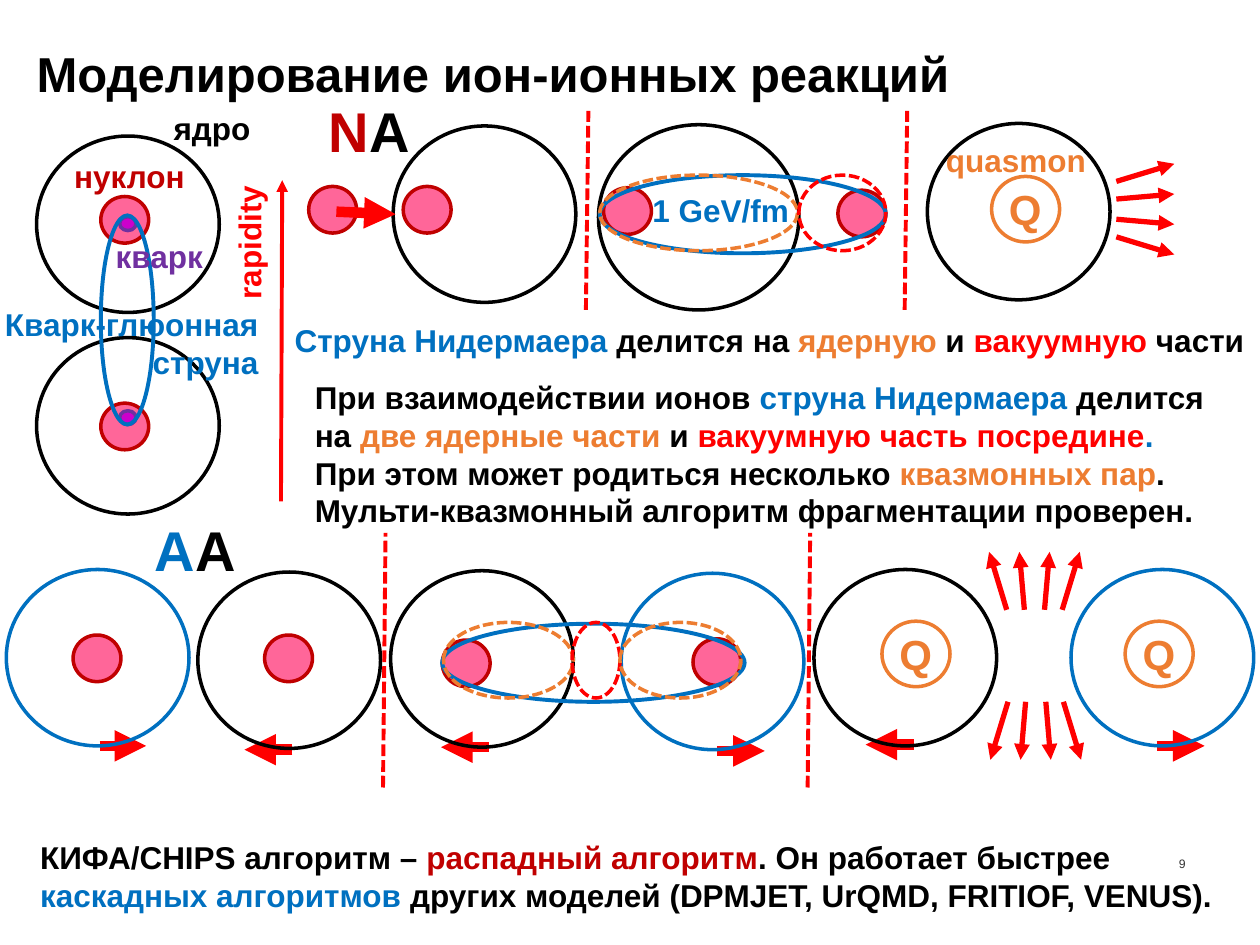
from dataclasses import dataclass

from lxml import etree
from pptx import Presentation
from pptx.dml.color import RGBColor
from pptx.enum.dml import MSO_LINE
from pptx.enum.shapes import MSO_CONNECTOR, MSO_SHAPE
from pptx.enum.text import MSO_ANCHOR, PP_ALIGN
from pptx.oxml.ns import qn
from pptx.slide import Slide
from pptx.util import Pt

PX = 9144
FONT = "Arial"
COLORS = {
    "black": "000000", "gray": "333333", "blue": "0070C0", "red": "FF0000",
    "crimson": "C00000", "pink": "FF6699", "orange": "ED7D31",
    "purple": "7030A0", "magenta": "CC00CC",
}
OVAL, STRAIGHT = MSO_SHAPE.OVAL, MSO_CONNECTOR.STRAIGHT
DASH = MSO_LINE.SQUARE_DOT
LEFT, RIGHT = PP_ALIGN.LEFT, PP_ALIGN.RIGHT
MIDDLE, TOP, BOTTOM = MSO_ANCHOR.MIDDLE, MSO_ANCHOR.TOP, MSO_ANCHOR.BOTTOM
NUCLEUS = (145, 140)
NUCLEON = (38, 37)
SPRAY = ((-22, -36), (-8, -12), (8, 12), (22, 36))


@dataclass
class Region:
    """A box on the slide whose parts are placed from its left top corner."""
    slide: Slide
    left: int
    top: int

    def spot(self, x, y):
        """Turn a point of the region into slide EMU."""
        return (self.left + x) * PX, (self.top + y) * PX


def rgb(name):
    """Look up a colour by name."""
    return RGBColor.from_string(COLORS[name])


def format_text(frame, paragraphs, size=18, bold=True, align=LEFT, anchor=TOP, inset=None):
    """Fill a frame with paragraphs made of (text, colour) runs."""
    frame.word_wrap = True
    frame.vertical_anchor = anchor
    if inset is not None:
        frame.margin_left = frame.margin_right = inset * PX
        frame.margin_top = frame.margin_bottom = inset * PX
    for index, pieces in enumerate(paragraphs):
        paragraph = frame.add_paragraph() if index else frame.paragraphs[0]
        paragraph.alignment = align
        for words, color in pieces:
            run = paragraph.add_run()
            run.text = words
            run.font.name, run.font.size, run.font.bold = FONT, Pt(size), bold
            run.font.color.rgb = rgb(color)


def label(region, x, y, width, height, *paragraphs, rotation=0, **style):
    """Add a text box to a region."""
    box = region.slide.shapes.add_textbox(*region.spot(x, y), width * PX, height * PX)
    box.rotation = rotation
    format_text(box.text_frame, paragraphs, **style)


def oval(region, x, y, width, height, color, fill=None, weight=2, dash=None):
    """Add an outlined ellipse, hollow unless a fill is given."""
    ring = region.slide.shapes.add_shape(OVAL, *region.spot(x, y), width * PX, height * PX)
    ring.shadow.inherit = False
    ring.line.color.rgb = rgb(color)
    ring.line.width = Pt(weight)
    ring.line.dash_style = dash
    if fill:
        ring.fill.solid()
        ring.fill.fore_color.rgb = rgb(fill)
    else:
        ring.fill.background()


def line(region, start, end, weight=2.25, dash=None, arrow=True):
    """Add a red line, with an arrowhead at its end if wanted."""
    connector = region.slide.shapes.add_connector(
        STRAIGHT, *region.spot(*start), *region.spot(*end))
    connector.line.color.rgb = rgb("red")
    connector.line.width = Pt(weight)
    connector.line.dash_style = dash
    properties = connector._element.spPr
    if arrow:
        etree.SubElement(properties.find(qn("a:ln")), qn("a:tailEnd"), type="triangle")
    etree.SubElement(properties, qn("a:effectLst"))


def divider(region, x, top, bottom):
    """Add a slightly slanted dashed line between two stages."""
    line(region, (x, bottom), (x + 2, top), dash=DASH, arrow=False)


def nucleus(region, x, y, color="black"):
    """Add a nucleus."""
    oval(region, x, y, *NUCLEUS, color)


def nucleon(region, x, y):
    """Add a nucleon."""
    oval(region, x, y, *NUCLEON, "crimson", fill="pink")


def gluon_string(region, x, y, width, height):
    """Add a quark-gluon string."""
    oval(region, x, y, width, height, "blue", weight=2.25)


def quasmon(region, x, y):
    """Add a quasmon with its letter."""
    oval(region, x, y, 54, 52, "orange")
    label(region, x + 4, y + 1, 43, 50, [("Q", "orange")], size=24)


def spray(region, x, y, dx=0, dy=0):
    """Add a fan of arrows around a point, heading along dx or dy."""
    for near, far in SPRAY:
        if dx:
            line(region, (x, y + near), (x + dx, y + far), weight=3)
        else:
            line(region, (x + near, y), (x + far, y + dy), weight=3)


def draw_string_model(region):
    """Show two nuclei joined by a string, with the rapidity axis."""
    for y in (26, 186):
        nucleus(region, 29, y)
    for nucleon_y, quark_y in ((74, 90), (238, 244)):
        nucleon(region, 80, nucleon_y)
        oval(region, 95, quark_y, 13, 11, "purple", fill="magenta")
    gluon_string(region, 80, 89, 42, 166)
    label(region, 128, 0, 93, 40, [("ядро", "black")])
    label(region, 49, 38, 108, 40, [("нуклон", "crimson")])
    label(region, 82, 101, 90, 40, [("кварк", "purple")])
    label(region, -9, 155, 224, 71, [("Кварк-глюонная струна", "blue")], align=RIGHT)
    label(region, 140, 88, 115, 40, [("rapidity", "red")], rotation=270)
    line(region, (223, 316), (224, 61))


def draw_nucleon_nucleus(region):
    """Show the three stages of a nucleon-nucleus reaction."""
    label(region, 11, 2, 106, 64, [("N", "crimson"), ("A", "black")], size=32)
    nucleus(region, 72, 30)
    for x, y in ((5, 78), (80, 78), (239, 79), (425, 81)):
        nucleon(region, x, y)
    line(region, (27, 98), (74, 100), weight=6)
    oval(region, 235, 29, 159, 147, "black")
    gluon_string(region, 236, 69, 227, 62)
    oval(region, 236, 69, 157, 60, "orange", dash=DASH)
    oval(region, 394, 69, 69, 60, "red", dash=DASH)
    label(region, 268, 77, 131, 40, [("1 GeV/fm", "blue")])
    nucleus(region, 496, 28)
    label(region, 501, 37, 133, 40, [("quasmon", "orange")])
    quasmon(region, 547, 70)
    spray(region, 646, 96, dx=46)
    for x in (225, 478):
        divider(region, x, 18, 176)


def draw_nucleus_nucleus(region):
    """Show the three stages of a nucleus-nucleus reaction."""
    label(region, 113, 0, 106, 64, [("A", "blue"), ("A", "black")], size=32)
    for x, y in ((58, 100), (210, 100), (351, 104), (550, 103)):
        nucleon(region, x, y)
    for start, end, y in ((79, 116, 188), (232, 194, 191), (388, 350, 189),
                          (569, 607, 192), (725, 687, 187), (918, 956, 188)):
        line(region, (start, y), (end, y), weight=6)
    for x, y, color in ((5, 48, "blue"), (157, 50, "black"), (310, 49, "black"),
                        (493, 51, "blue"), (646, 48, "black"), (850, 48, "blue")):
        nucleus(region, x, y, color)
    gluon_string(region, 351, 91, 240, 62)
    for x, width, color in ((352, 103, "orange"), (454, 38, "red"), (492, 96, "orange")):
        oval(region, x, 90, width, 60, color, dash=DASH)
    for x in (700, 893):
        quasmon(region, x, 89)
    spray(region, 821, 80, dy=-46)
    spray(region, 822, 153, dy=46)
    for x in (304, 641):
        divider(region, x, 19, 221)


def write_statements(region):
    """Write the title, the explanations and the page number."""
    title = region.slide.shapes.title
    title.left, title.top = region.spot(29, 34)
    title.width, title.height = 897 * PX, 54 * PX
    format_text(title.text_frame, [[("Моделирование ион-ионных реакций", "black")]],
                size=28, anchor=MIDDLE, inset=0)
    title.text_frame.paragraphs[0].line_spacing = 0.9
    label(region, 224, 250, 776, 40, [
        ("Струна Нидермаера ", "blue"), ("делится на ", "black"), ("ядерную ", "orange"),
        ("и ", "black"), ("вакуумную ", "red"), ("части", "black")])
    label(region, 240, 295, 734, 131, [
        ("При взаимодействии ионов ", "black"), ("струна Нидермаера ", "blue"),
        ("делится на ", "black"), ("две ядерные части ", "orange"), ("и ", "black"),
        ("вакуумную часть посредине", "red"), (".", "blue")], [
        ("При этом может родиться несколько ", "black"), ("квазмонных пар", "orange"),
        (".", "black")], [
        ("Мульти-квазмонный алгоритм фрагментации проверен.", "black")])
    label(region, 22, 660, 952, 71, [
        ("КИФА/CHIPS алгоритм – ", "black"), ("распадный алгоритм", "crimson"),
        (". Он работает быстрее ", "black"), ("каскадных алгоритмов ", "blue"),
        ("других моделей (DPMJET, UrQMD, FRITIOF, VENUS).", "black")])
    label(region, 878, 675, 63, 16, [("9", "gray")], size=7, bold=False,
          align=RIGHT, anchor=BOTTOM, inset=0)


def main():
    """Build the slide and save it."""
    deck = Presentation()
    deck.slide_width, deck.slide_height = 1000 * PX, 750 * PX
    slide = deck.slides.add_slide(deck.slide_layouts[5])
    draw_string_model(Region(slide, 0, 82))
    draw_nucleon_nucleus(Region(slide, 240, 70))
    draw_nucleus_nucleus(Region(slide, 0, 404))
    write_statements(Region(slide, 0, 0))
    deck.save("out.pptx")


if __name__ == "__main__":
    main()
